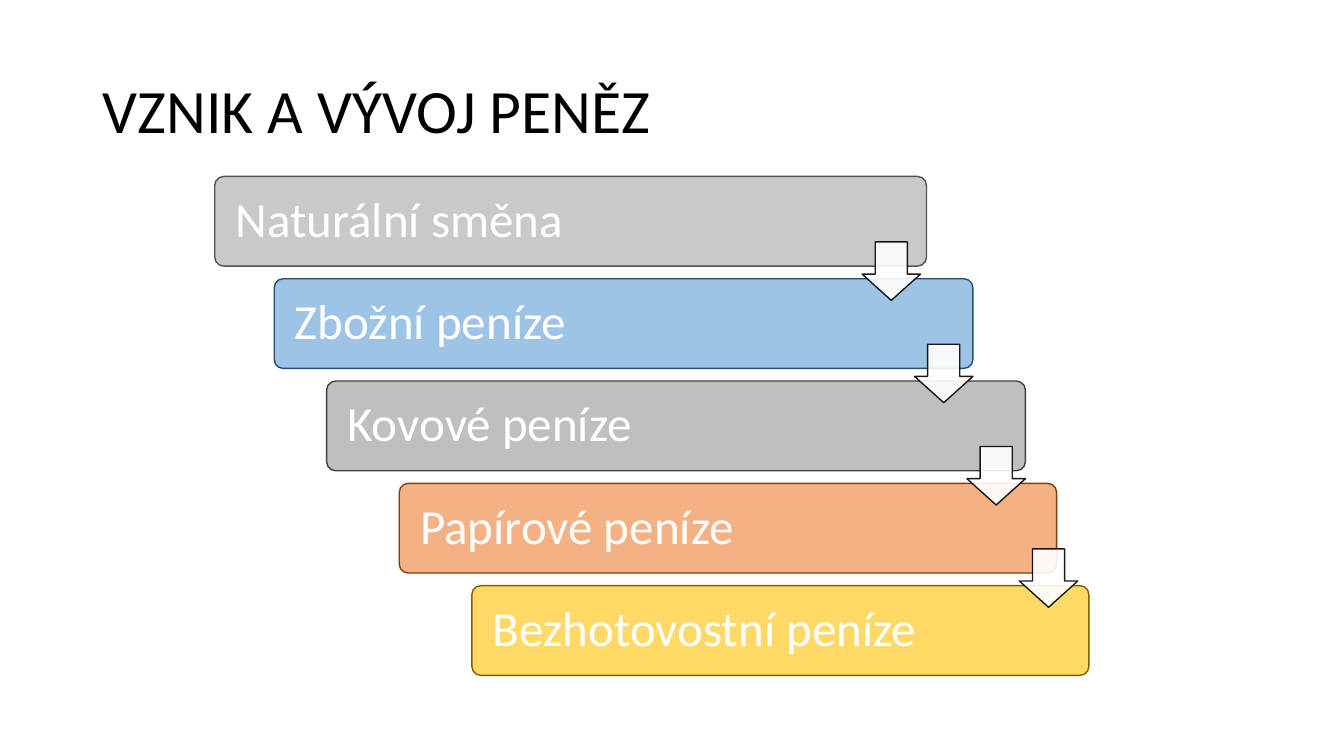
import pptx
import pptx.util
import pptx.dml.color
import pptx.enum.shapes
import pptx.enum.text
import pptx.oxml
import pptx.oxml.ns

RGB = pptx.dml.color.RGBColor
KIND = pptx.enum.shapes.MSO_SHAPE
ALIGN = pptx.enum.text.PP_ALIGN
MIDDLE = pptx.enum.text.MSO_ANCHOR.MIDDLE

# Content: text, left, width, fill, line
BLACK = RGB(0x00, 0x00, 0x00)
WHITE = RGB(0xFF, 0xFF, 0xFF)
TITLE = "VZNIK A VÝVOJ PENĚZ"
STAGES = [
    ("Naturální směna", 213, 706, RGB(0xC9, 0xC9, 0xC9), RGB(0x52, 0x52, 0x52)),
    ("Zbožní peníze", 272, 693, RGB(0x9D, 0xC3, 0xE6), RGB(0x1F, 0x4E, 0x79)),
    ("Kovové peníze", 324, 693, RGB(0xBF, 0xBF, 0xBF), RGB(0x40, 0x40, 0x40)),
    ("Papírové peníze", 396, 652, RGB(0xF4, 0xB1, 0x83), RGB(0x84, 0x3C, 0x0B)),
    ("Bezhotovostní peníze", 468, 612, RGB(0xFF, 0xD9, 0x66), RGB(0x80, 0x60, 0x00)),
]
FONT = "Calibri"

# Layout in px, 100 to the inch
TOP, HIGH, PITCH = 175, 89, 101.5
INSET = 18
ARROW_LEFT, ARROW_STEP, ARROW_DROP, ARROW_SIZE = 855, 52, 65, 58


def px(n):
    return pptx.util.Emu(round(n * 9144))


def draw(slide, kind, box, adjust, fill, line):
    shape = slide.shapes.add_shape(kind, *map(px, box))
    shape.shadow.inherit = False
    for i, value in enumerate(adjust):
        shape.adjustments[i] = value
    shape.fill.solid()
    shape.fill.fore_color.rgb = fill
    shape.line.color.rgb = line
    shape.line.width = pptx.util.Pt(1)
    return shape


def write(shape, text, size, color):
    frame = shape.text_frame
    frame.text = text
    frame.word_wrap = True
    frame.vertical_anchor = MIDDLE
    para = frame.paragraphs[0]
    para.alignment = ALIGN.LEFT
    para.line_spacing = 0.9
    para.font.name = FONT
    para.font.size = pptx.util.Pt(size)
    para.font.color.rgb = color


def fade(shape, percent):
    for color in shape.element.spPr.iter(pptx.oxml.ns.qn("a:srgbClr")):
        alpha = pptx.oxml.parse_xml(
            f'<a:alpha {pptx.oxml.ns.nsdecls("a")} val="{percent * 1000}"/>')
        color.append(alpha)


def main():
    deck = pptx.Presentation()
    deck.slide_width, deck.slide_height = px(1333), px(750)
    slide = deck.slides.add_slide(deck.slide_layouts[5])

    # Title
    title = slide.shapes.title
    title.left, title.top, title.width, title.height = map(px, (92, 40, 1150, 145))
    write(title, TITLE, 44, BLACK)

    # Stepped bars
    for i, (text, left, width, fill, line) in enumerate(STAGES):
        box = (left, TOP + i * PITCH, width, HIGH)
        bar = draw(slide, KIND.ROUNDED_RECTANGLE, box, [0.1], fill, line)
        write(bar, text, 35, WHITE)
        bar.text_frame.margin_left = px(INSET)

    # Arrows between the bars
    for i in range(len(STAGES) - 1):
        box = (ARROW_LEFT + i * ARROW_STEP, TOP + i * PITCH + ARROW_DROP,
               ARROW_SIZE, ARROW_SIZE)
        # The head length comes first, then the shaft width
        arrow = draw(slide, KIND.DOWN_ARROW, box, [0.55, 0.45], WHITE, BLACK)
        fade(arrow, 90)

    deck.save("out.pptx")


if __name__ == "__main__":
    main()
